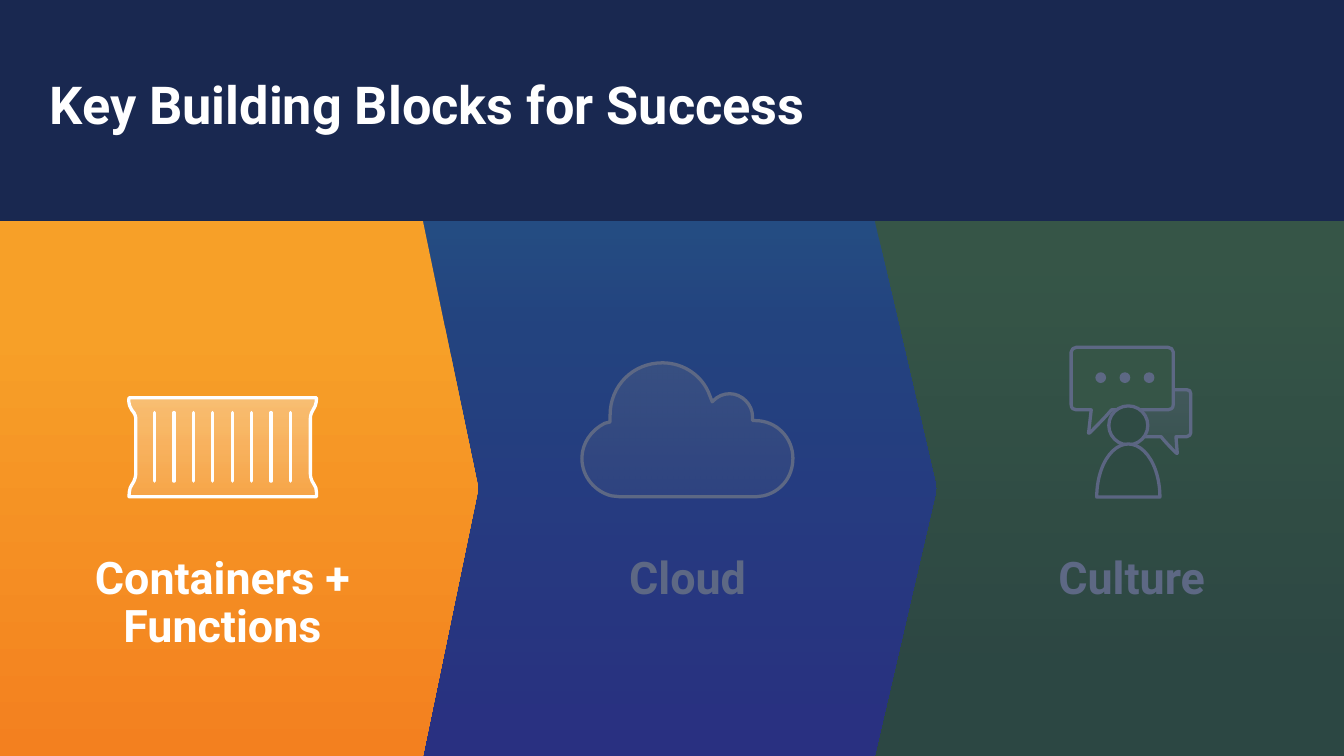
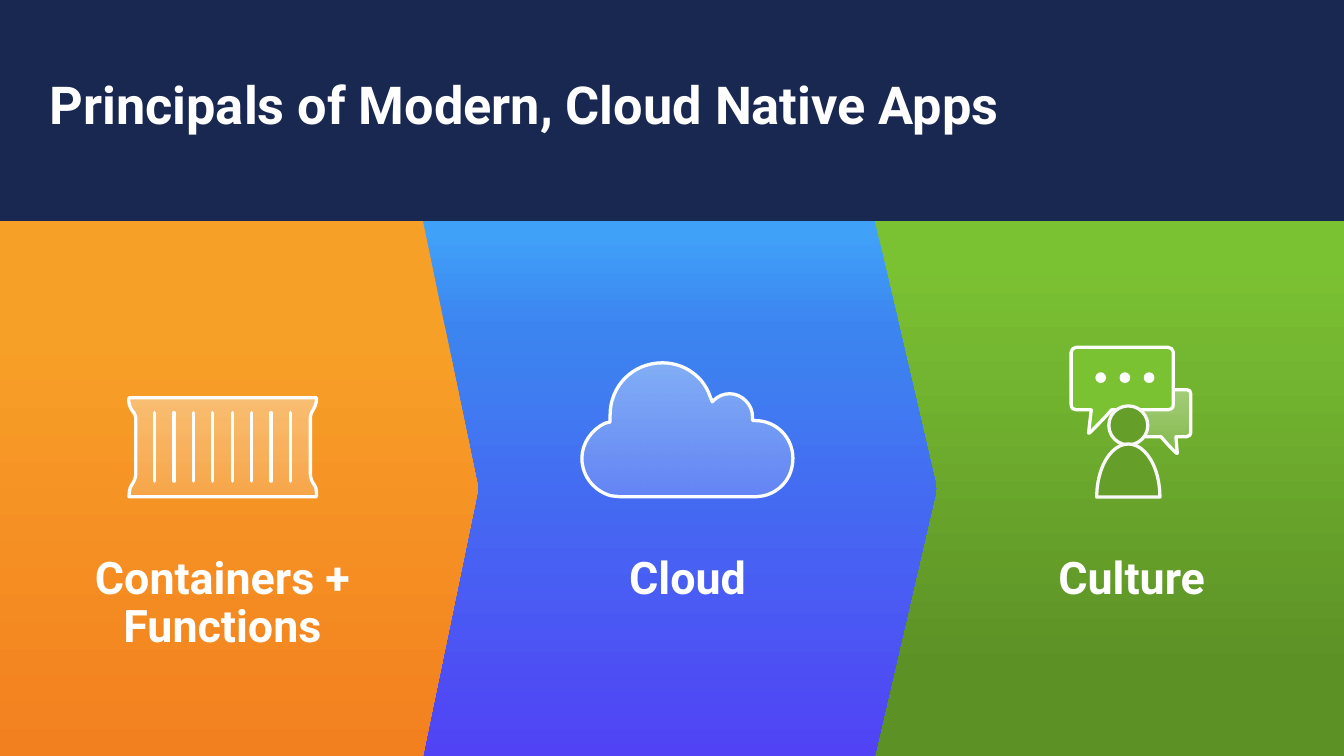
from lxml import etree
from pptx import Presentation
from pptx import util as u
from pptx.dml.color import RGBColor
from pptx.enum import shapes, text
from pptx.oxml import ns

deck = Presentation()
deck.slide_width, deck.slide_height = u.Inches(10), u.Inches(5.625)
cell = deck.slide_width // 1000
kind = shapes.MSO_SHAPE
top, tall = 164.4, 398.1
base = 408.5
font = "Roboto"
pen = 1.75
hue = {
    "navy": "192850", "white": "FFFFFF", "pale": "F8F8F8",
    "lime": "7BC233", "moss": "5C9126", "leaf": "659F2A",
    "sky": "40A1F8", "azure": "3C85F0", "violet": "5143F5",
    "amber": "F7A028", "orange": "F3801F",
}
green = [(7, "lime", 100), (84, "moss", 100)]
blue = [(2, "sky", 100), (20, "azure", 100), (100, "violet", 100)]
gold = [(2, "amber", 100), (20, "amber", 100), (100, "orange", 100)]
glass = [(2, "white", 35), (100, "white", 16)]
veil = [(0, "navy", 70)]

paths = {
    "cloud": [
        (493, 270), (509, 270, 523, 280, 528, 294), (530, 299), (531, 298),
        (534, 295, 538, 293, 543, 293), (552, 293, 560, 301, 560, 310),
        (560, 313), (562, 313), (578, 313, 590, 326, 590, 341),
        (590, 355, 581, 366, 568, 369), (563, 369.6), (461, 369.6), (455, 369),
        (443, 366, 433, 355, 433, 341), (433, 330, 440, 320, 450, 315),
        (454, 314), (454, 309), (454, 287, 471, 270, 493, 270)],
    "reply": [
        (832, 290), (883, 290), (885, 290, 886, 291, 886, 293), (886, 322),
        (886, 323, 885, 325, 883, 325), (875, 325), (876, 337),
        (876, 337, 876, 338, 875, 337), (875, 337, 866, 328, 864, 325),
        (832, 325), (831, 325, 829, 323, 829, 322), (829, 293),
        (829, 291, 831, 290, 832, 290)],
    "bubble": [
        (869, 258.4), (801, 258.4), (799, 258.4, 797, 260, 797, 262), (797, 301),
        (797, 304, 799, 305, 801, 305), (812, 305), (810, 322),
        (810, 322, 810, 323, 811, 322), (812, 321, 824, 309, 827, 305),
        (869, 305), (871, 305, 873, 304, 873, 301), (873, 262),
        (873, 260, 871, 258.4, 869, 258.4)],
    "crate": [
        (231, 353), (231, 311), (231, 311, 231, 308, 233, 305),
        (236, 301, 235.5, 296, 235.5, 296), (96, 296),
        (96, 296, 95, 301, 98, 305), (101, 308, 101, 311, 101, 311),
        (101, 353), (101, 353, 101, 357, 98, 361),
        (96, 363, 96, 369.6, 96, 369.6), (235.5, 369.6),
        (235.5, 369.6, 236, 363, 234, 361), (231, 357, 231, 353, 231, 353)],
    "veil": [(649, top), (1001, top), (1001, top + tall),
             (298, top + tall), (298, top)],
}


def form(what, box, fill, edge=None, turns=()):
    if what in paths:
        path = [[round(v * cell) for v in step] for step in paths[what]]
        maker = page.shapes.build_freeform(*path[0], scale=1.0)
        maker.add_line_segments([step[-2:] for step in path[1:]], close=True)
        shape = maker.convert_to_shape()
        lines = shape._element.spPr.findall(".//" + ns.qn("a:lnTo"))
        for line, step in zip(lines, path[1:]):
            if len(step) == 6:
                curve = etree.Element(ns.qn("a:cubicBezTo"))
                for x, y in zip(step[::2], step[1::2]):
                    etree.SubElement(curve, ns.qn("a:pt"),
                                     x=str(x - shape.left), y=str(y - shape.top))
                line.getparent().replace(line, curve)
    else:
        shape = page.shapes.add_shape(what, *[round(v * cell) for v in box])
    shape.shadow.inherit = False
    for i, turn in enumerate(turns):
        shape.adjustments[i] = turn
    if len(fill) == 1:
        shape.fill.solid()
        shape.fill.fore_color.rgb = RGBColor.from_string(hue[fill[0][1]])
        tint = shape._element.spPr.find(".//" + ns.qn("a:srgbClr"))
        if fill[0][2] < 100:
            etree.SubElement(tint, ns.qn("a:alpha"), val=str(fill[0][2] * 1000))
    else:
        shape.fill.gradient()
        shape.fill.gradient_angle = 270
        stops = shape._element.spPr.find(".//" + ns.qn("a:gsLst"))
        for old in list(stops):
            stops.remove(old)
        for spot, tone, alpha in fill:
            stop = etree.SubElement(stops, ns.qn("a:gs"), pos=str(spot * 1000))
            tint = etree.SubElement(stop, ns.qn("a:srgbClr"), val=hue[tone])
            if alpha < 100:
                etree.SubElement(tint, ns.qn("a:alpha"), val=str(alpha * 1000))
    if edge:
        shape.line.color.rgb = RGBColor.from_string(hue[edge])
        shape.line.width = u.Pt(pen)
        etree.SubElement(shape.line._get_or_add_ln(), ns.qn("a:round"))
    else:
        shape.line.fill.background()
    return shape


def write(words, box, size, head=False):
    frame = page.shapes.add_textbox(*[round(v * cell) for v in box]).text_frame
    frame.word_wrap = True
    frame.text = words
    line = frame.paragraphs[0]
    if head:
        frame.margin_left = 0
    else:
        line.alignment = text.PP_ALIGN.CENTER
        line.line_spacing = 0.9
    face = line.runs[0].font
    face.name, face.size, face.bold = font, u.Pt(size), True
    face.color.rgb = RGBColor.from_string(hue["white"])


for title, dim in [("Key Building Blocks for Success", True),
                   ("Principals of Modern, Cloud Native Apps", False)]:
    page = deck.slides.add_slide(deck.slide_layouts[6])
    page.background.fill.solid()
    page.background.fill.fore_color.rgb = RGBColor.from_string(hue["navy"])
    write(title, (37, 49, 925, 60), 28, True)

    form(kind.RECTANGLE, (649, top, 353, tall), green)
    form(kind.PENTAGON, (298, top, 399, tall), blue, turns=[0.116])
    write("Cloud", (336.6, base, 350, 43), 24)
    write("Culture", (732, base, 220, 43), 24)
    form("cloud", None, glass, "white")
    form("reply", None, glass, "white")
    form("bubble", None, [(0, "lime", 100)], "white")
    for i in range(3):
        form(kind.OVAL, (815 + 18 * i, 277, 8, 8), [(0, "white", 100)])
    form(kind.OVAL, (825, 302, 29, 29), [(0, "leaf", 100)], "pale")
    body = form(kind.CHORD, (800, 346.4, 79, 47), [(0, "leaf", 100)], "pale", [54.05, 162])
    body.rotation = 90

    if dim:
        form("veil", None, veil)

    form(kind.PENTAGON, (0, top, 356, tall), gold, turns=[0.116])
    write("Containers + Functions", (58, base, 215, 43), 24)
    form("crate", None, glass, "white")
    for i in range(8):
        x = round((115 + 14.45 * i) * cell)
        rib = page.shapes.add_connector(shapes.MSO_CONNECTOR.STRAIGHT, x, 307 * cell, x, 358 * cell)
        rib.line.color.rgb = RGBColor.from_string(hue["white"])
        rib.line.width = u.Pt(pen)
        edge = rib.line._get_or_add_ln()
        edge.set("cap", "rnd")
        etree.SubElement(edge, ns.qn("a:round"))
        etree.SubElement(rib._element.spPr, ns.qn("a:effectLst"))

deck.save("out.pptx")
